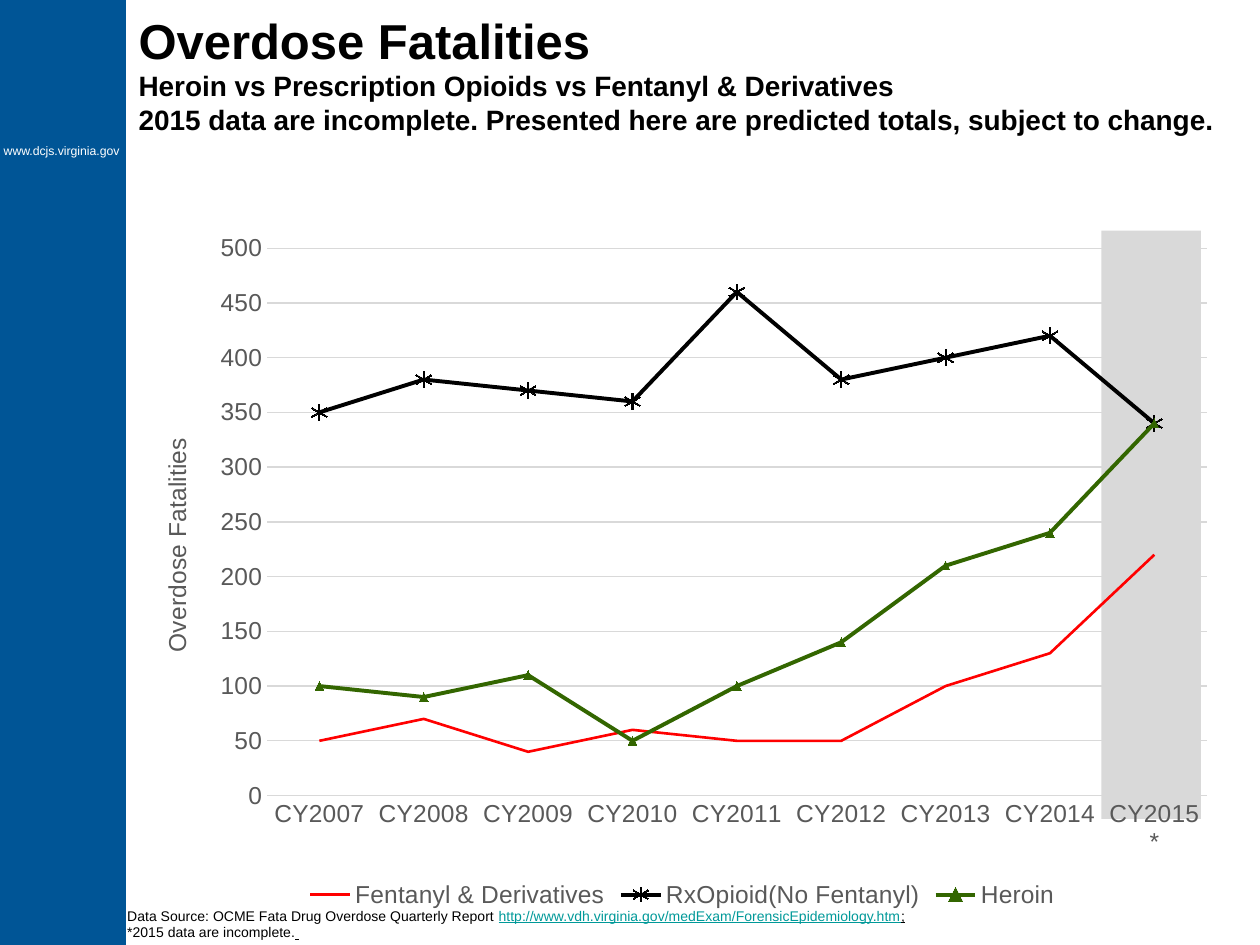
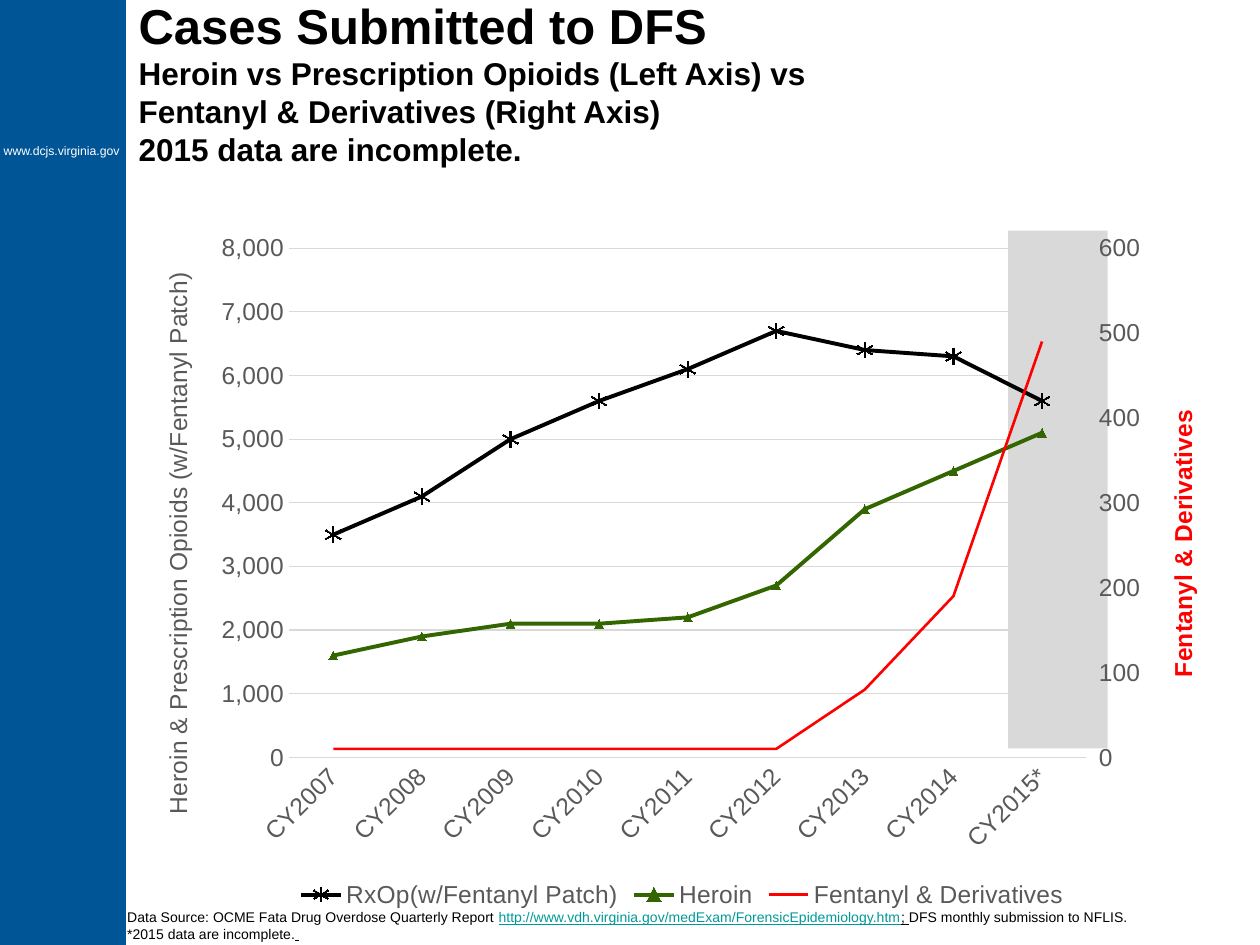
from copy import deepcopy

from lxml import etree
from pptx import Presentation
from pptx import util as u
from pptx.chart.axis import ValueAxis
from pptx.chart.data import CategoryChartData
from pptx.dml.color import RGBColor
from pptx.enum import chart as ch, shapes, text

FONT = "Arial"
COLORS = {"band": "005596", "white": "FFFFFF", "black": "000000", "grey": "D9D9D9",
          "label": "595959", "link": "009999", "red": "FF0000", "green": "336600"}
C = "http://schemas.openxmlformats.org/drawingml/2006/chart"
A = "http://schemas.openxmlformats.org/drawingml/2006/main"
NO_FILL = (f'<c:spPr xmlns:c="{C}" xmlns:a="{A}"><a:noFill/>'
           '<a:ln><a:noFill/></a:ln></c:spPr>')

prs = Presentation()
prs.slide_width, prs.slide_height = u.Inches(10), u.Inches(7.5)
COL = prs.slide_width / 10  # square grid: 10 columns by 7.5 rows


def box(*cells):
    """Turn left, top, width, height in grid cells into lengths."""
    return [u.Emu(round(c * COL)) for c in cells]


def style(font, size, color, bold=False):
    font.name, font.size, font.bold = FONT, u.Pt(size), bold
    font.color.rgb = RGBColor.from_string(COLORS[color])


# Content of the two slides
YEARS = [f"CY{y}" for y in range(2007, 2015)] + ["CY2015*"]
LOOKS = {  # colour, line width, marker style, marker size
    "Fentanyl": ("red", 1.5, ch.XL_MARKER_STYLE.NONE, 5),
    "RxOp": ("black", 2.25, ch.XL_MARKER_STYLE.STAR, 9),
    "Heroin": ("green", 2.25, ch.XL_MARKER_STYLE.TRIANGLE, 5),
}
SLIDES = [
    dict(title=["Overdose Fatalities",
                "Heroin vs Prescription Opioids vs Fentanyl & Derivatives",
                "2015 data are incomplete. Presented here are predicted totals, "
                "subject to change."],
         title_top=0.08, title_bottom_inset=0.3, subtitle_size=16,
         shade=(8.74, 1.83, 0.79, 4.67), plot=(0.12, 0.04, 0.86, 0.79),
         axis="Overdose Fatalities", top=500, step=50,
         series={"Fentanyl & Derivatives": [50, 70, 40, 60, 50, 50, 100, 130, 220],
                 "RxOpioid(No Fentanyl)": [350, 380, 370, 360, 460, 380, 400, 420, 340],
                 "Heroin": [100, 90, 110, 50, 100, 140, 210, 240, 340]},
         right=None, source_top=7.2, source_end=[(";", "black", True)]),
    dict(title=["Cases Submitted to DFS",
                "Heroin vs Prescription Opioids (Left Axis) vs",
                "Fentanyl & Derivatives (Right Axis)",
                "2015 data are incomplete."],
         title_top=0.02, title_bottom_inset=0.05, subtitle_size=18,
         shade=(8, 1.83, 0.79, 4.11), plot=(0.14, 0.04, 0.73, 0.735),
         axis="Heroin & Prescription Opioids (w/Fentanyl Patch)", top=8000, step=1000,
         series={"RxOp(w/Fentanyl Patch)":
                 [3500, 4100, 5000, 5600, 6100, 6700, 6400, 6300, 5600],
                 "Heroin": [1600, 1900, 2100, 2100, 2200, 2700, 3900, 4500, 5100],
                 "Fentanyl & Derivatives": [10, 10, 10, 10, 10, 10, 80, 190, 490]},
         right="Fentanyl & Derivatives", source_top=7.21,
         source_end=[("; ", "black", True),
                     ("DFS monthly submission to NFLIS.", "black", False)]),
]

for number, d in enumerate(SLIDES):
    s = prs.slides.add_slide(prs.slide_layouts[5])

    # Side band and web address, moved once to the master
    if number == 0:
        band = s.shapes.add_shape(shapes.MSO_SHAPE.RECTANGLE, *box(0, 0, 1, 7.5))
        band.shadow.inherit = False
        band.fill.solid()
        band.fill.fore_color.rgb = RGBColor.from_string(COLORS["band"])
        band.line.fill.background()
        site = s.shapes.add_textbox(*box(0.03, 1.14, 0.93, 0.12))
        tf = site.text_frame
        tf.margin_left = tf.margin_right = tf.margin_top = tf.margin_bottom = 0
        tf.word_wrap = False
        tf.text = "www.dcjs.virginia.gov"
        style(tf.paragraphs[0].runs[0].font, 7, "white")
        for shape_id, sp in enumerate((band, site), 20):
            sp.element.nvSpPr.cNvPr.set("id", str(shape_id))
            prs.slide_master.shapes.element.append(sp.element)

    # Shade behind the incomplete year
    shade = s.shapes.add_shape(shapes.MSO_SHAPE.RECTANGLE, *box(*d["shade"]))
    shade.shadow.inherit = False
    shade.fill.solid()
    shade.fill.fore_color.rgb = RGBColor.from_string(COLORS["grey"])
    shade.line.fill.background()

    # Title and subtitle lines
    title = s.shapes.title
    title.left, title.top, title.width, title.height = box(1, d["title_top"], 9, 1.25)
    tf = title.text_frame
    tf.word_wrap, tf.auto_size = True, text.MSO_AUTO_SIZE.NONE
    tf.vertical_anchor = text.MSO_ANCHOR.MIDDLE
    tf.margin_bottom = u.Inches(d["title_bottom_inset"])
    tf.text = "\n".join(d["title"])
    for i, p in enumerate(tf.paragraphs):
        p.alignment = text.PP_ALIGN.LEFT
        p.space_before = u.Pt(0)
        style(p.runs[0].font, d["subtitle_size"] if i else 28, "black", True)

    # Line chart
    data = CategoryChartData(number_format="#,##0")
    data.categories = YEARS
    for name, values in d["series"].items():
        data.add_series(name, values)
    chart = s.shapes.add_chart(ch.XL_CHART_TYPE.LINE_MARKERS,
                               *box(1.08, 1.75, 8.67, 5.5), data).chart
    style(chart.font, 14, "black")
    chart.has_title = False
    chart.has_legend = True
    chart.legend.position = ch.XL_LEGEND_POSITION.BOTTOM
    chart.legend.include_in_layout = False
    style(chart.legend.font, 14, "label")
    chart.plots[0].vary_by_categories = False

    for ser in chart.plots[0].series:
        key = next(k for k in LOOKS if ser.name.startswith(k))
        color, width, marker, size = LOOKS[key]
        rgb = RGBColor.from_string(COLORS[color])
        ser.smooth = False
        ser.format.line.width = u.Pt(width)
        ser.format.line.color.rgb = rgb
        ser.marker.style = marker
        if marker != ch.XL_MARKER_STYLE.NONE:
            ser.marker.size = size
            ser.marker.format.line.color.rgb = rgb
            if marker == ch.XL_MARKER_STYLE.STAR:
                ser.marker.format.fill.background()
            else:
                ser.marker.format.fill.solid()
                ser.marker.format.fill.fore_color.rgb = rgb

    # Axes
    cat, val = chart.category_axis, chart.value_axis
    for axis in (cat, val):
        axis.major_tick_mark = axis.minor_tick_mark = ch.XL_TICK_MARK.NONE
        style(axis.tick_labels.font, 14, "label")
    val.has_major_gridlines = True
    for line in (cat.format.line, val.major_gridlines.format.line):
        line.width = u.Pt(0.75)
        line.color.rgb = RGBColor.from_string(COLORS["grey"])
    val.format.line.fill.background()
    val.minimum_scale, val.maximum_scale, val.major_unit = 0, d["top"], d["step"]
    val.tick_labels.number_format = "#,##0"
    val.tick_labels.number_format_is_linked = False
    tf = val.axis_title.text_frame
    tf.text = d["axis"]
    style(tf.paragraphs[0].runs[0].font, 14, "label")
    for body in chart.element.xpath(".//c:valAx/c:title//a:bodyPr"):
        body.set("rot", "-5400000")
        body.set("vert", "horz")

    # Plot position and clear backgrounds
    area = chart.element.xpath(".//c:plotArea")[0]
    for old in area.xpath("./c:layout"):
        area.remove(old)
    places = "".join(f'<c:{k} val="{v}"/>' for k, v in zip("xywh", d["plot"]))
    area.insert(0, etree.fromstring(
        f'<c:layout xmlns:c="{C}"><c:manualLayout><c:layoutTarget val="inner"/>'
        f'<c:xMode val="edge"/><c:yMode val="edge"/>{places}'
        '</c:manualLayout></c:layout>'))
    chart.element.xpath("./c:chart")[0].addnext(etree.fromstring(NO_FILL))

    # Right axis for the last series
    if d["right"]:
        for body in cat.tick_labels.font and chart.element.xpath(".//c:catAx/c:txPr/a:bodyPr"):
            body.set("rot", "-2700000")
            body.set("vert", "horz")
        left_lines = area.xpath("./c:lineChart")[0]
        right_lines = deepcopy(left_lines)
        left_lines.addnext(right_lines)
        left_lines.remove(left_lines.xpath("./c:ser")[-1])
        for ser in right_lines.xpath("./c:ser")[:-1]:
            right_lines.remove(ser)
        left_val = area.xpath("./c:valAx")[0]
        right_val = deepcopy(left_val)
        right_cat = deepcopy(area.xpath("./c:catAx")[0])
        left_val.addnext(right_val)
        right_val.addnext(right_cat)
        for node, own, other in ((right_cat, "5001", "5002"), (right_val, "5002", "5001")):
            node.xpath("./c:axId")[0].set("val", own)
            node.xpath("./c:crossAx")[0].set("val", other)
        for node, axis_id in zip(right_lines.xpath("./c:axId"), ("5001", "5002")):
            node.set("val", axis_id)
        right_cat.xpath("./c:delete")[0].set("val", "1")
        right_val.xpath("./c:axPos")[0].set("val", "r")
        right_val.xpath("./c:crosses")[0].set("val", "max")
        right = ValueAxis(right_val)
        right.has_major_gridlines = False
        right.major_tick_mark = ch.XL_TICK_MARK.OUTSIDE
        right.maximum_scale, right.major_unit = 600, 100
        right.tick_labels.number_format = "General"
        r = right.axis_title.text_frame.paragraphs[0].runs[0]
        r.text = d["right"]
        style(r.font, 14, "red", True)
    area.append(etree.fromstring(NO_FILL))

    # Data source
    tf = s.shapes.add_textbox(*box(1.01, d["source_top"], 8.53, 0.27)).text_frame
    tf.margin_left = tf.margin_right = tf.margin_top = tf.margin_bottom = 0
    tf.word_wrap = True
    source = [("Data Source: OCME Fata Drug Overdose Quarterly Report ", "black", False),
              ("http://www.vdh.virginia.gov/medExam/ForensicEpidemiology.htm", "link", True)]
    note = [("*2015 data are incomplete.", "black", False), (" ", "black", True)]
    for p, runs in ((tf.paragraphs[0], source + d["source_end"]), (tf.add_paragraph(), note)):
        for words, color, underline in runs:
            r = p.add_run()
            r.text = words
            style(r.font, 8, color)
            r.font.underline = underline

prs.save("out.pptx")
